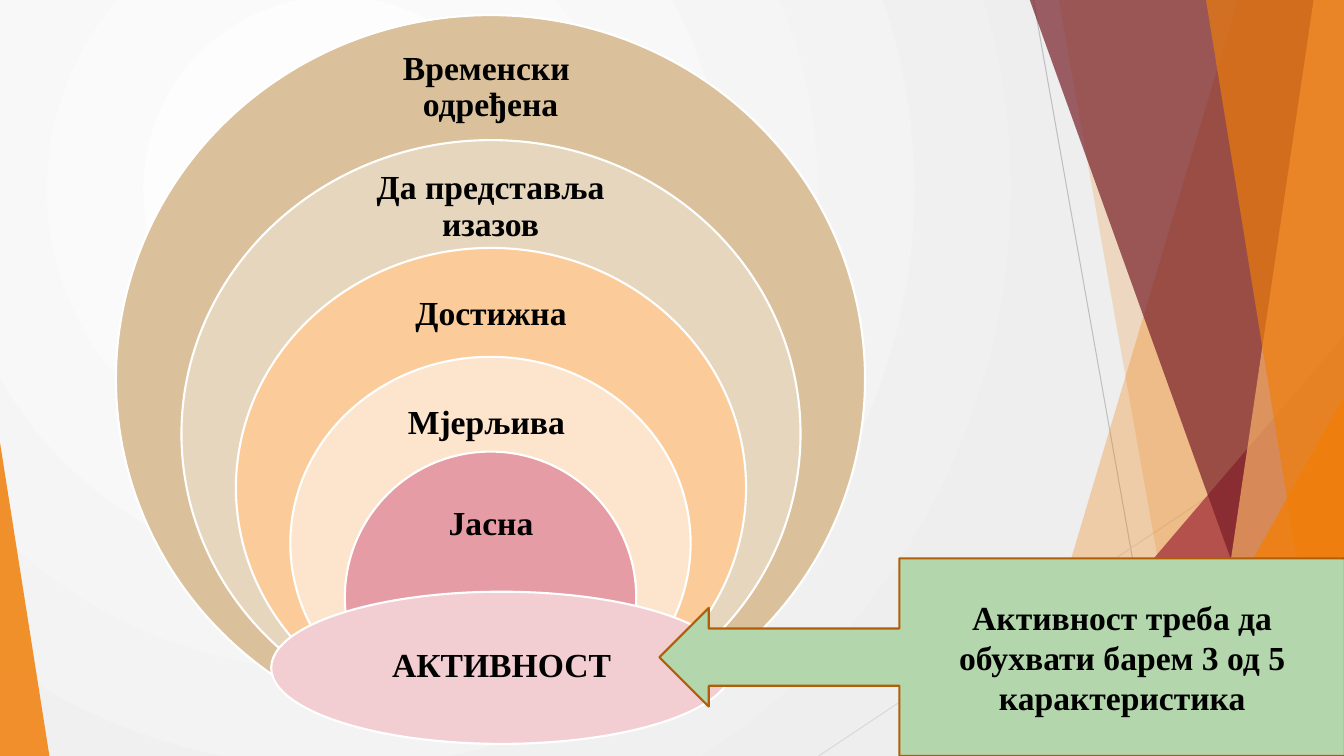
"""Build a slide of nested circles for the qualities of an activity."""
from lxml import etree
from pptx import Presentation
from pptx import util as u
from pptx.dml.color import RGBColor
from pptx.enum import shapes, text
from pptx.oxml.ns import qn

FONT = {"name": "Times New Roman", "size": u.Pt(24), "bold": True}
FRAME = {"word_wrap": True, "vertical_anchor": text.MSO_ANCHOR.MIDDLE}
MARGINS = ("margin_left", "margin_top", "margin_right", "margin_bottom")
TOP, BOTTOM, RIGHT = -0.01, 7.5, 13.33

RAYS = [((10.25, 0), (11.58, 7.5), "BFBFBF"), ((13.33, 4.03), (8.12, 7.5), "D9D9D9")]
BACK_FACETS = [(12.28, 10.04, "F07F09", 30), (10.5, 11.83, "F07F09", 20)]
FRONT_FACETS = [
    (10.21, 12.91, "771F28", 70),
    (13.03, 11.92, "F9B268", 70),
    (11.96, 13.18, "F07F09", 65),
]
BACK_TRIANGLE = ((9.77, 3.33, 3.56, 4.17), 1, "9F2936", 72)
FRONT_TRIANGLES = [
    ((11.34, 3.93, 1.99, 3.57), 1, "F07F09", 80),
    ((0, 4.39, 0.49, 3.11), 0, "F07F09", 85),
]
RINGS = [
    ((1.15, 0.15, 7.43, 7.22), "DAC19B", (3.47, 0.51, 2.79, 0.72), "Временски  одређена"),
    ((1.8, 1.39, 6.14, 5.83), "E6D6BD", (3.54, 1.72, 2.65, 0.67), "Да представља изазов"),
    ((2.34, 2.46, 5.06, 4.76), "FBCC9A", (3.56, 2.79, 2.62, 0.66), "Достижна"),
    ((2.88, 3.54, 3.97, 3.7), "FDE5CD", (3.79, 3.87, 2.15, 0.67), "Мјерљива "),
    ((3.42, 4.48, 2.89, 2.89), "E69CA4", (3.93, 4.84, 1.88, 0.72), "Јасна"),
    ((2.69, 5.87, 4.57, 1.51), "F2CED2", (3.36, 6.24, 3.23, 0.75), "АКТИВНОСТ"),
]


def color(hex_string):
    """Turn a hex string into a colour."""
    return RGBColor.from_string(hex_string)


def apply(target, values):
    """Set every attribute named in a dict of format values."""
    for name, value in values.items():
        setattr(target, name, value)


def inches(values):
    """Convert a sequence of numbers to lengths."""
    return [u.Inches(value) for value in values]


def paint(shape, fill, line=None, alpha=100):
    """Give a shape a solid fill, an optional outline and no shadow."""
    shape.shadow.inherit = False
    shape.fill.solid()
    shape.fill.fore_color.rgb = color(fill)
    if alpha < 100:
        solid = shape._element.spPr.find(qn("a:solidFill"))
        etree.SubElement(solid[0], qn("a:alpha"), val=str(alpha * 1000))
    if line:
        shape.line.color.rgb = color(line)
        shape.line.width = u.Pt(1.5)
    else:
        shape.line.fill.background()


def write(box, wording, spacing=None):
    """Write bold centred text in a box."""
    apply(box.text_frame, FRAME)
    para = box.text_frame.paragraphs[0]
    apply(para, {"alignment": text.PP_ALIGN.CENTER, "line_spacing": spacing})
    span = para.add_run()
    span.text = wording
    apply(span.font, FONT)
    span.font.color.rgb = color("000000")


def set_background(page):
    """Fill the page with a soft radial gradient."""
    fill = page.background.fill
    fill.gradient()
    for stop, shade in zip(fill.gradient_stops, ("FFFFFF", "EEEEEE")):
        stop.color.rgb = color(shade)
    gradient = next(page._element.iter(qn("a:gradFill")))
    gradient.remove(gradient.find(qn("a:lin")))
    circle = etree.SubElement(gradient, qn("a:path"), path="circle")
    etree.SubElement(circle, qn("a:fillToRect"), l="50000", t="50000", r="100000", b="100000")


def add_ray(page, start, end, shade):
    """Draw a thin straight line."""
    ray = page.shapes.add_connector(shapes.MSO_CONNECTOR.STRAIGHT, *inches(start + end))
    ray.line.color.rgb = color(shade)
    ray.line.width = u.Pt(0.75)
    etree.SubElement(ray._element.spPr, qn("a:effectLst"))


def add_facet(page, top_x, bottom_x, fill, alpha):
    """Draw a translucent facet reaching to the right edge."""
    corners = [(RIGHT, TOP), (RIGHT, BOTTOM), (bottom_x, BOTTOM)]
    builder = page.shapes.build_freeform(*inches((top_x, TOP)))
    builder.add_line_segments([inches(corner) for corner in corners], close=True)
    paint(builder.convert_to_shape(), fill, alpha=alpha)


def add_triangle(page, place, apex, fill, alpha):
    """Draw a translucent right-angled triangle."""
    triangle = page.shapes.add_shape(shapes.MSO_SHAPE.ISOSCELES_TRIANGLE, *inches(place))
    triangle.adjustments[0] = apex
    paint(triangle, fill, alpha=alpha)


def add_ring(page, place, fill, label_place, wording):
    """Draw an ellipse and its label."""
    ring = page.shapes.add_shape(shapes.MSO_SHAPE.OVAL, *inches(place))
    paint(ring, fill, "FFFFFF")
    label = page.shapes.add_textbox(*inches(label_place))
    apply(label.text_frame, dict.fromkeys(MARGINS, u.Inches(0.19)))
    write(label, wording, 0.9)


def add_callout(page, place, wording):
    """Draw the arrow callout that points to the activity."""
    callout = page.shapes.add_shape(shapes.MSO_SHAPE.LEFT_ARROW_CALLOUT, *inches(place))
    for index, value in enumerate((0.29, 0.25, 0.25, 0.65)):
        callout.adjustments[index] = value
    paint(callout, "B3D6AC", "B25E07")
    write(callout, wording)


def main():
    """Build and save the deck."""
    deck = Presentation()
    apply(deck, {"slide_width": u.Inches(13.33), "slide_height": u.Inches(7.5)})
    page = deck.slides.add_slide(deck.slide_layouts[6])
    set_background(page)
    for ray in RAYS:
        add_ray(page, *ray)
    for facet in BACK_FACETS:
        add_facet(page, *facet)
    add_triangle(page, *BACK_TRIANGLE)
    for facet in FRONT_FACETS:
        add_facet(page, *facet)
    for triangle in FRONT_TRIANGLES:
        add_triangle(page, *triangle)
    for ring in RINGS:
        add_ring(page, *ring)
    add_callout(page, (6.54, 5.54, 6.8, 1.96),
                "Активност треба да обухвати барем 3 од 5 карактеристика")
    deck.save("out.pptx")


if __name__ == "__main__":
    main()
